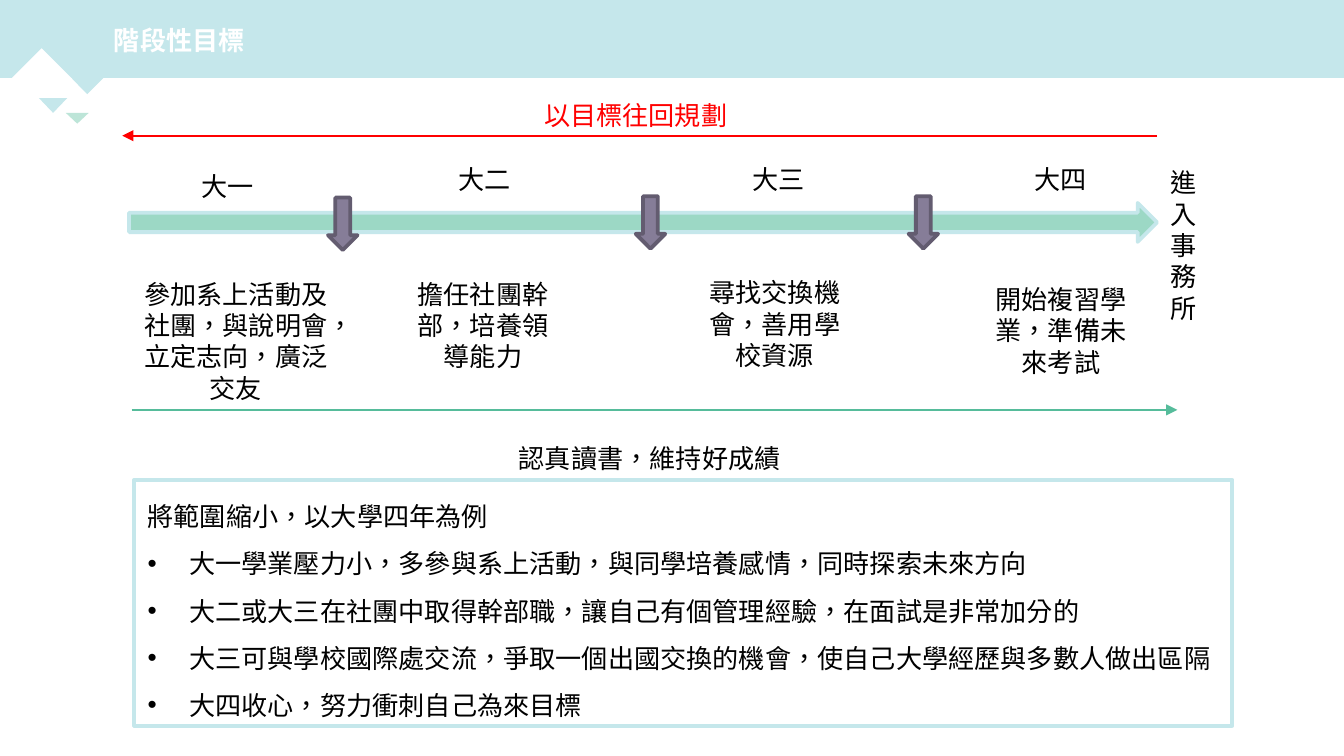
from lxml import etree
from pptx import Presentation
from pptx.dml.color import RGBColor
from pptx.enum.lang import MSO_LANGUAGE_ID
from pptx.enum.shapes import MSO_CONNECTOR, MSO_SHAPE
from pptx.enum.text import MSO_ANCHOR, PP_ALIGN
from pptx.oxml.ns import qn
from pptx.util import Inches, Pt

FONT = "Noto Sans CJK SC"
SIZE = Pt(14)
BLACK = RGBColor(0, 0, 0)
WHITE = RGBColor(0xFF, 0xFF, 0xFF)
RED = RGBColor(0xFF, 0, 0)
SKY = RGBColor(0xC5, 0xE7, 0xEB)
MINT = RGBColor(0xBD, 0xE5, 0xD8)
TEAL = RGBColor(0x9C, 0xD8, 0xC5)
GREEN = RGBColor(0x56, 0xBC, 0x9B)
PURPLE = RGBColor(0x86, 0x7D, 0x98)
DARK_PURPLE = RGBColor(0x63, 0x5C, 0x70)
LEFT, CENTER = PP_ALIGN.LEFT, PP_ALIGN.CENTER
MIDDLE = MSO_ANCHOR.MIDDLE
CHINESE = MSO_LANGUAGE_ID.TRADITIONAL_CHINESE
RECTANGLE = MSO_SHAPE.RECTANGLE
RIGHT_ARROW, DOWN_ARROW = MSO_SHAPE.RIGHT_ARROW, MSO_SHAPE.DOWN_ARROW
STRAIGHT = MSO_CONNECTOR.STRAIGHT

# Stage name, its left and top, then the task and its left, top, width, height
STAGES = [
    ("大一", 0.49, 0.53, "參加系上活動及社團，與說明會，立定志向，廣泛交友", 0, 1.33, 1.69, 1.04),
    ("大二", 2.4, 0.48, "擔任社團幹部，培養領導能力", 2.05, 1.33, 1.27, 0.81),
    ("大三", 4.59, 0.48, "尋找交換機會，善用學校資源", 4.21, 1.32, 1.29, 0.81),
    ("大四", 6.69, 0.48, "開始複習學業，準備未來考試", 6.34, 1.37, 1.29, 0.81),
]
MILESTONES = [(1.53, 0.78), (3.82, 0.77), (5.85, 0.77)]
ADVICE = [
    "大一學業壓力小，多參與系上活動，與同學培養感情，同時探索未來方向",
    "大二或大三在社團中取得幹部職，讓自己有個管理經驗，在面試是非常加分的",
    "大三可與學校國際處交流，爭取一個出國交換的機會，使自己大學經歷與多數人做出區隔",
    "大四收心，努力衝刺自己為來目標",
]


def style(para, text, color=BLACK, align=LEFT, bold=False):
    para.alignment = align
    font = para.font
    font.name, font.size, font.bold = FONT, SIZE, bold
    font.color.rgb = color
    span = para.add_run()
    span.text = text
    span.font.language_id = CHINESE


def add_text(page, box, text, color=BLACK, align=LEFT, bold=False, wrap=True, inset=0.1):
    frame = page.shapes.add_textbox(*map(Inches, box)).text_frame
    frame.word_wrap = wrap
    frame.margin_left = frame.margin_right = Inches(inset)
    style(frame.paragraphs[0], text, color, align, bold)


def paint(shape, fill, line=None):
    shape.shadow.inherit = False
    shape.fill.solid()
    shape.fill.fore_color.rgb = fill
    if line is None:
        shape.line.fill.background()
    else:
        shape.line.color.rgb = line
        shape.line.width = Pt(2)


def add_shape(page, kind, box, fill, line=None):
    shape = page.shapes.add_shape(kind, *map(Inches, box))
    paint(shape, fill, line)
    return shape


def add_triangle(page, left, right, base, tip, fill):
    builder = page.shapes.build_freeform(Inches(left), Inches(base))
    corners = [(right, base), ((left + right) / 2, tip)]
    builder.add_line_segments([(Inches(x), Inches(y)) for x, y in corners])
    paint(builder.convert_to_shape(), fill)


def add_arrow(page, start, end, y, color, weight):
    arrow = page.shapes.add_connector(STRAIGHT, *map(Inches, (start, y, end, y)))
    arrow.line.color.rgb = color
    arrow.line.width = Pt(weight)
    line = arrow._element.spPr.find(qn("a:ln"))
    etree.SubElement(line, qn("a:tailEnd"), type="triangle")
    etree.SubElement(arrow._element.spPr, qn("a:effectLst"))


def add_header(page, left, top, width, height):
    add_shape(page, RECTANGLE, (left, top, width, height), SKY)
    # Corner triangles: left, right, base, tip
    for x1, x2, base, tip, fill in [
        (0.48, 0.82, 0.53, 0.7, SKY),
        (0.49, 0.66, 0.84, 0.92, MINT),
        (0.08, 0.54, 0.59, 0.36, WHITE),
        (0.29, 0.5, 0.73, 0.84, SKY),
    ]:
        add_triangle(page, left + x1, left + x2, top + base, top + tip, fill)
    add_text(page, (left + 0.75, top + 0.13, 4, 0.34), "階段性目標", WHITE, bold=True)


def add_timeline(page, left, top, width):
    # Planning back from the goal
    add_text(page, (left + 3.04, top, 1.66, 0.34), "以目標往回規劃", RED, wrap=False)
    add_arrow(page, left + width, left, top + 0.32, RED, 1)

    # Main arrow, milestones and goal
    add_shape(page, RIGHT_ARROW, (left + 0.05, top + 0.82, width - 0.05, 0.29), TEAL, SKY)
    for x, y in MILESTONES:
        add_shape(page, DOWN_ARROW, (left + x, top + y, 0.22, 0.39), PURPLE, DARK_PURPLE)
    add_text(page, (left + 7.8, top + 0.5, 0.22, 1.28), "進入事務所", inset=0)

    # Stages and their tasks
    for name, name_x, name_y, task, x, y, task_width, task_height in STAGES:
        add_text(page, (left + name_x, top + name_y, 0.59, 0.34), name, wrap=False)
        add_text(page, (left + x, top + y, task_width, task_height), task, align=CENTER)

    # Steady effort through all stages
    add_arrow(page, left + 0.07, left + 7.85, top + 2.36, GREEN, 0.75)
    add_text(page, (left + 2.28, top + 2.55, 3.29, 0.34), "認真讀書，維持好成績", align=CENTER)


def add_advice(page, left, top, width, height):
    panel = add_shape(page, RECTANGLE, (left, top, width, height), WHITE, SKY)
    frame = panel.text_frame
    frame.word_wrap = True
    frame.vertical_anchor = MIDDLE
    style(frame.paragraphs[0], "將範圍縮小，以大學四年為例")
    for text in ADVICE:
        para = frame.add_paragraph()
        style(para, text)
        props = para._p.get_or_add_pPr()
        props.set("marL", str(Inches(0.31)))
        props.set("indent", str(-Inches(0.31)))
        props.insert(0, etree.Element(qn("a:buFont"), typeface="Arial"))
        props.insert(1, etree.Element(qn("a:buChar"), char="•"))
    for para in frame.paragraphs:
        para.line_spacing = 1.5


def main():
    deck = Presentation()
    deck.slide_width, deck.slide_height = Inches(10), Inches(10 * 9 / 16)
    page = deck.slides.add_slide(deck.slide_layouts[6])
    add_header(page, 0, 0, 10, 0.58)
    add_timeline(page, 0.91, 0.69, 7.7)
    add_advice(page, 1, 3.57, 8.17, 1.83)
    deck.save("out.pptx")


if __name__ == "__main__":
    main()
